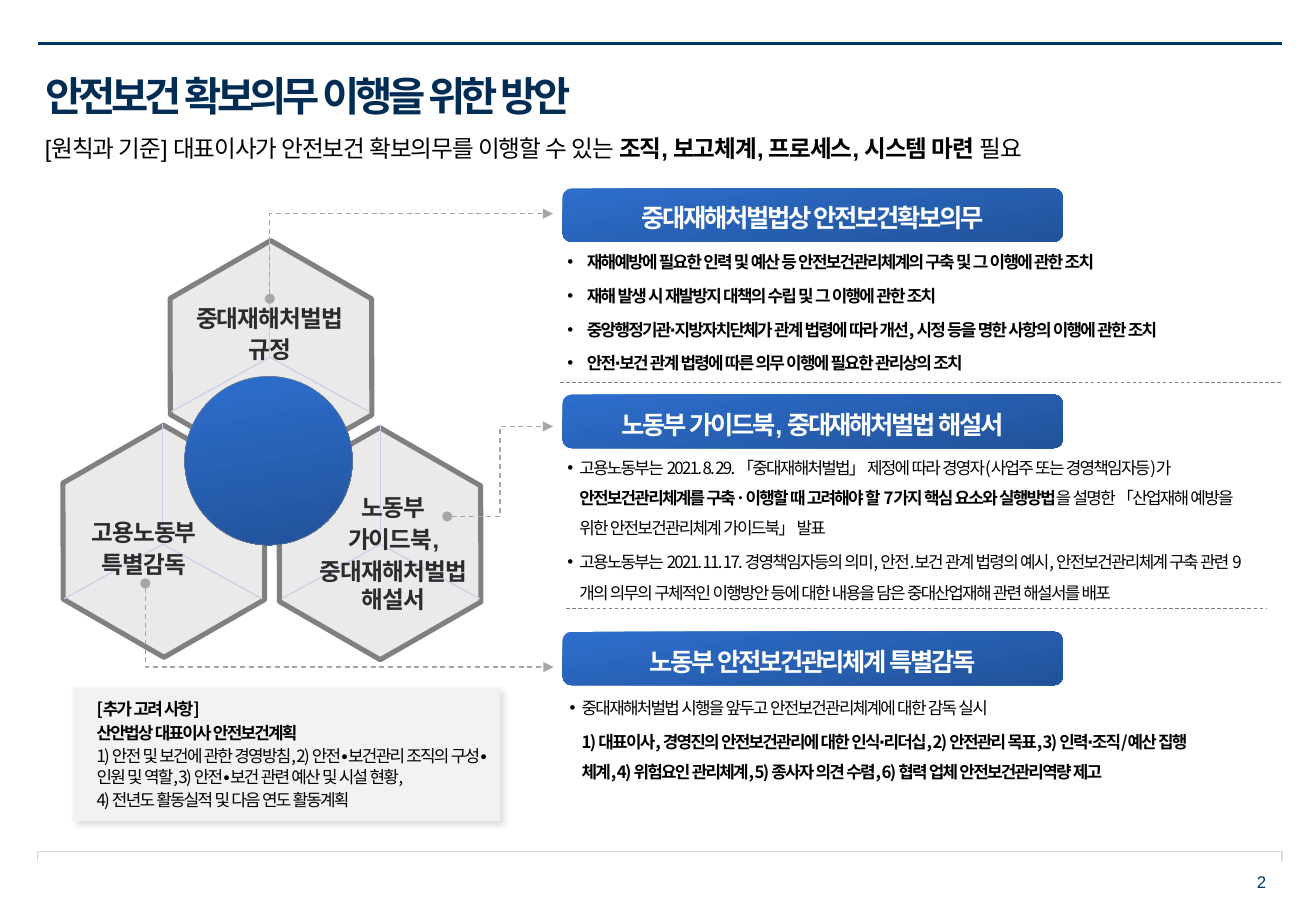
from lxml import etree
from pptx import Presentation
from pptx.dml.color import RGBColor
from pptx.enum.dml import MSO_LINE
from pptx.enum.lang import MSO_LANGUAGE_ID
from pptx.enum.shapes import MSO_CONNECTOR, MSO_SHAPE
from pptx.enum.text import MSO_ANCHOR, MSO_AUTO_SIZE, PP_ALIGN
from pptx.oxml.ns import qn
from pptx.util import Cm, Pt

LEFT, MID, RIGHT = PP_ALIGN.LEFT, PP_ALIGN.CENTER, PP_ALIGN.RIGHT
TOP, CENTER = MSO_ANCHOR.TOP, MSO_ANCHOR.MIDDLE
STRAIGHT, ELBOW = MSO_CONNECTOR.STRAIGHT, MSO_CONNECTOR.ELBOW
RECT, ROUND = MSO_SHAPE.RECTANGLE, MSO_SHAPE.ROUNDED_RECTANGLE
HEXAGON, OVAL = MSO_SHAPE.HEXAGON, MSO_SHAPE.OVAL
DASH, KOREAN = MSO_LINE.DASH, MSO_LANGUAGE_ID.KOREAN


class Theme:
    title, navy = "012D55", "013668"
    light, dark = "2D6ECD", "22539A"
    black, white, label = "000000", "FFFFFF", "2C2B2D"
    cell, note, spoke = "EAEAEA", "F2F2F2", "CCCFEA"
    edge, arrow, frame = "808080", "A6A6A6", "D9D9D9"
    big, head, mid, small = 24, 15, 14, 10
    sans, hangul = "Arial", "Noto Sans CJK KR"


def write(shape, lines, size, color, bold=False, face=Theme.sans, track=0.0,
          align=LEFT, anchor=TOP, lead=1.0, gap=0, marks="", left=0.0,
          pad=(0.25, 0.13, 0.25, 0.13), wrap=True):
    """Fill a shape with lines; an asterisk switches bold on and off."""
    frame = shape.text_frame
    frame.auto_size, frame.word_wrap = MSO_AUTO_SIZE.NONE, wrap
    frame.vertical_anchor = anchor
    frame.margin_left, frame.margin_top, frame.margin_right, frame.margin_bottom = map(Cm, pad)
    for n, line in enumerate(lines):
        para = frame.add_paragraph() if n else frame.paragraphs[0]
        props = para._p.get_or_add_pPr()
        dot = marks[n:n + 1] == "•"
        props.set("marL", str(Cm(left)))
        props.set("indent", str(-Cm(left) if dot else 0))
        if dot:
            etree.SubElement(props, qn("a:buFont")).set("typeface", Theme.sans)
            etree.SubElement(props, qn("a:buChar")).set("char", "•")
        else:
            etree.SubElement(props, qn("a:buNone"))
        para.alignment, para.line_spacing = align, lead
        para.space_before, para.space_after = Pt(gap if n else 0), Pt(0)
        for k, part in enumerate(line.split("*")):
            for j, piece in enumerate(part.split("\n")):
                if j:
                    para.add_line_break()
                if not piece:
                    continue
                run = para.add_run()
                run.text = piece
                font = run.font
                font.name, font.size, font.language_id = face, Pt(size), KOREAN
                font.bold = bold != (k % 2 == 1)
                font.color.rgb = RGBColor.from_string(color)
                mark = run._r.get_or_add_rPr()
                mark.set("spc", str(round(track * 100)))
                etree.SubElement(mark, qn("a:ea")).set("typeface", Theme.hangul)


def paint(shape, fill=None, line=None, width=0.75, dash=False, ends=False):
    """Set fill, line and arrowheads, and clear the shadow."""
    props = shape._element.spPr
    if fill == "blue":
        shape.fill.gradient()
        shape.fill.gradient_angle = 280
        for stop, tone in zip(shape.fill.gradient_stops, (Theme.light, Theme.dark)):
            stop.color.rgb = RGBColor.from_string(tone)
        shape.fill.gradient_stops[0].position = 0
        shape.fill.gradient_stops[1].position = 1
    elif fill:
        shape.fill.solid()
        shape.fill.fore_color.rgb = RGBColor.from_string(fill)
    if line:
        shape.line.color.rgb = RGBColor.from_string(line)
        shape.line.width = Pt(width)
    else:
        shape.line.fill.background()
    if dash:
        shape.line.dash_style = DASH
    if ends:
        stroke = shape.line._get_or_add_ln()
        etree.SubElement(stroke, qn("a:headEnd")).set("type", "oval")
        etree.SubElement(stroke, qn("a:tailEnd")).set("type", "triangle")
    return etree.SubElement(props, qn("a:effectLst"))


deck = Presentation()
deck.slide_width, deck.slide_height = Cm(27.51), Cm(19.05)
slide = deck.slides.add_slide(deck.slide_layouts[4])
shapes = slide.shapes
holders = {h.placeholder_format.idx: h for h in slide.placeholders}

# Page frame
rule = shapes.add_connector(STRAIGHT, Cm(0.79), Cm(0.91), Cm(26.8), Cm(0.91))
paint(rule, line=Theme.navy, width=2)
foot = shapes.build_freeform(Cm(0.79), Cm(18.01))
foot.add_line_segments([(Cm(0.79), Cm(17.81)), (Cm(26.8), Cm(17.81)),
                        (Cm(26.8), Cm(18.01))], close=False)
foot = foot.convert_to_shape()
foot.fill.background()
paint(foot, line=Theme.frame)
page = shapes.add_textbox(Cm(20.52), Cm(17.93), Cm(6.2), Cm(1.02))
write(page, ["2"], Theme.small, Theme.navy, align=RIGHT, anchor=CENTER)

# Title, lead and three lists
boxes = [(0.71, 1.12, 26.09, 1.65), (0.69, 2.67, 24.77, 0.86),
         (11.66, 4.95, 15.5, 2.97), (11.66, 9.25, 14.73, 3.48),
         (11.71, 14.27, 13.84, 2.18)]
for key, box in enumerate(boxes):
    hold = holders[key]
    hold.left, hold.top, hold.width, hold.height = map(Cm, box)

write(holders[0], ["안전보건 확보의무 이행을 위한 방안"], Theme.big, Theme.title,
      bold=True, track=-2.6, anchor=CENTER, lead=1.09)
write(holders[1], ["[원칙과 기준] 대표이사가 안전보건 확보의무를 이행할 수 있는 "
                   "*조직, 보고체계, 프로세스, 시스템 마련 *필요"],
      Theme.mid, Theme.black, track=-0.7)

lists = [
    (0.41, True, "••••", [
        "재해예방에 필요한 인력 및 예산 등 안전보건관리체계의 구축 및 그 이행에 관한 조치",
        "재해 발생 시 재발방지 대책의 수립 및 그 이행에 관한 조치",
        "중앙행정기관∙지방자치단체가 관계 법령에 따라 개선, 시정 등을 명한 사항의 이행에 관한 조치",
        "안전∙보건 관계 법령에 따른 의무 이행에 필요한 관리상의 조치"]),
    (0.25, False, "••", [
        "고용노동부는 2021. 8. 29. 「중대재해처벌법」 제정에 따라 경영자(사업주 또는 경영책임자등)가 "
        "*안전보건관리체계를 구축·이행할 때 고려해야 할 7가지 핵심 요소와 실행방법*"
        "을 설명한 「산업재해 예방을 위한 안전보건관리체계 가이드북」 발표",
        "고용노동부는 2021. 11. 17. 경영책임자등의 의미, 안전.보건 관계 법령의 예시, 안전보건관리체계 구축 "
        "관련 9개의 의무의 구체적인 이행방안 등에 대한 내용을 담은 중대산업재해 관련 해설서를 배포"]),
    (0.25, False, "•", [
        "중대재해처벌법 시행을 앞두고 안전보건관리체계에 대한 감독 실시",
        "*1) 대표이사, 경영진의 안전보건관리에 대한 인식∙리더십, 2) 안전관리 목표, 3) 인력∙조직/예산 "
        "집행 체계, 4) 위험요인 관리체계, 5) 종사자 의견 수렴, 6) 협력 업체 안전보건관리역량 제고*"]),
]
for key, (left, bold, marks, lines) in enumerate(lists, 2):
    write(holders[key], lines, Theme.small, Theme.black, bold=bold, face=Theme.hangul,
          track=-1, lead=1.5, gap=2, marks=marks, left=left, pad=(0.2, 0.1, 0.1, 0.1))

# Blue headings and dashed dividers
for top, text in [(3.94, "중대재해처벌법상 안전보건확보의무"),
                  (8.25, "노동부 가이드북, 중대재해처벌법 해설서"),
                  (13.21, "노동부 안전보건관리체계 특별감독")]:
    bar = shapes.add_shape(ROUND, Cm(11.76), Cm(top), Cm(10.46), Cm(1.12))
    paint(bar, "blue")
    write(bar, [text], Theme.head, Theme.white, bold=True, track=-1.4, align=MID, lead=1.18)
for x1, x2, y in [(11.71, 26.77, 8), (11.84, 26.49, 12.73)]:
    rule = shapes.add_connector(STRAIGHT, Cm(x1), Cm(y), Cm(x2), Cm(y))
    paint(rule, line=Theme.edge, width=0.5, dash=True)

# Note card with soft shadow
note = shapes.add_shape(RECT, Cm(1.52), Cm(14.38), Cm(8.94), Cm(2.79))
glow = etree.SubElement(paint(note, Theme.note), qn("a:outerShdw"), blurRad=str(Pt(4)),
                        dist=str(Pt(3)), dir="2700000", algn="tl", rotWithShape="0")
tone = etree.SubElement(glow, qn("a:srgbClr"), val=Theme.black)
etree.SubElement(tone, qn("a:alpha"), val="12000")
write(note, ["*[추가 고려 사항]*", "*산안법상 대표이사 안전보건계획*",
             "1) 안전 및 보건에 관한 경영방침, 2) 안전∙보건관리 조직의 구성∙ 인원 및 역할, "
             "3) 안전∙보건 관련 예산 및 시설 현황,",
             "4) 전년도 활동실적 및 다음 연도 활동계획"],
      Theme.small, Theme.black, face=Theme.hangul, track=-1, anchor=CENTER, gap=2, left=0.25)

# Hexagons, then the spokes from each hub
for x, y in [(5.51, 9.27), (0.99, 9.22), (3.23, 5.36)]:
    cell = shapes.add_shape(HEXAGON, Cm(x), Cm(y), Cm(4.87), Cm(4.2))
    cell.adjustments[0] = 0.29
    cell.rotation = 30
    paint(cell, Theme.cell, Theme.edge, 3)
for x, y in [(5.64, 7.47), (7.95, 11.38), (3.4, 11.38)]:
    for dx, dy in [(0, -2.52), (-2.06, 1.14), (2.08, 1.14)]:
        spoke = shapes.add_connector(STRAIGHT, Cm(x), Cm(y), Cm(x + dx), Cm(y + dy))
        paint(spoke, line=Theme.spoke)

# Center disc and hexagon labels
disc = shapes.add_shape(OVAL, Cm(3.86), Cm(7.87), Cm(3.51), Cm(3.53))
paint(disc, "blue", Theme.edge, 0.25)
for box, lines in [((6.45, 10.21, 3.56, 2.74), ["노동부", "가이드북,", "중대재해처벌법\n해설서"]),
                   ((3.86, 6.25, 3.56, 1.47), ["중대재해처벌법", "규정"]),
                   ((1.7, 10.74, 2.62, 1.47), ["고용노동부", "특별감독"])]:
    label = shapes.add_textbox(*map(Cm, box))
    write(label, lines, Theme.mid, Theme.label, bold=True, track=-0.5, align=MID,
          gap=2, pad=(0.1, 0.1, 0.1, 0.1), wrap=False)

# Dashed arrows; a turned one has a single bend
for x1, y1, x2, y2, turn in [(9.49, 8.32, 7.71, 2.4, 90), (8.18, 8.81, 6.43, 17.34, 270),
                             (9.35, 10.8, 11.56, 8.92, 0)]:
    arrow = shapes.add_connector(ELBOW, Cm(x1), Cm(y1), Cm(x2), Cm(y2))
    if turn:
        props = arrow._element.spPr
        props.find(qn("a:xfrm")).set("rot", str(turn * 60000))
        props.find(qn("a:prstGeom")).set("prst", "bentConnector2")
    paint(arrow, line=Theme.arrow, dash=True, ends=True)

deck.save("out.pptx")
